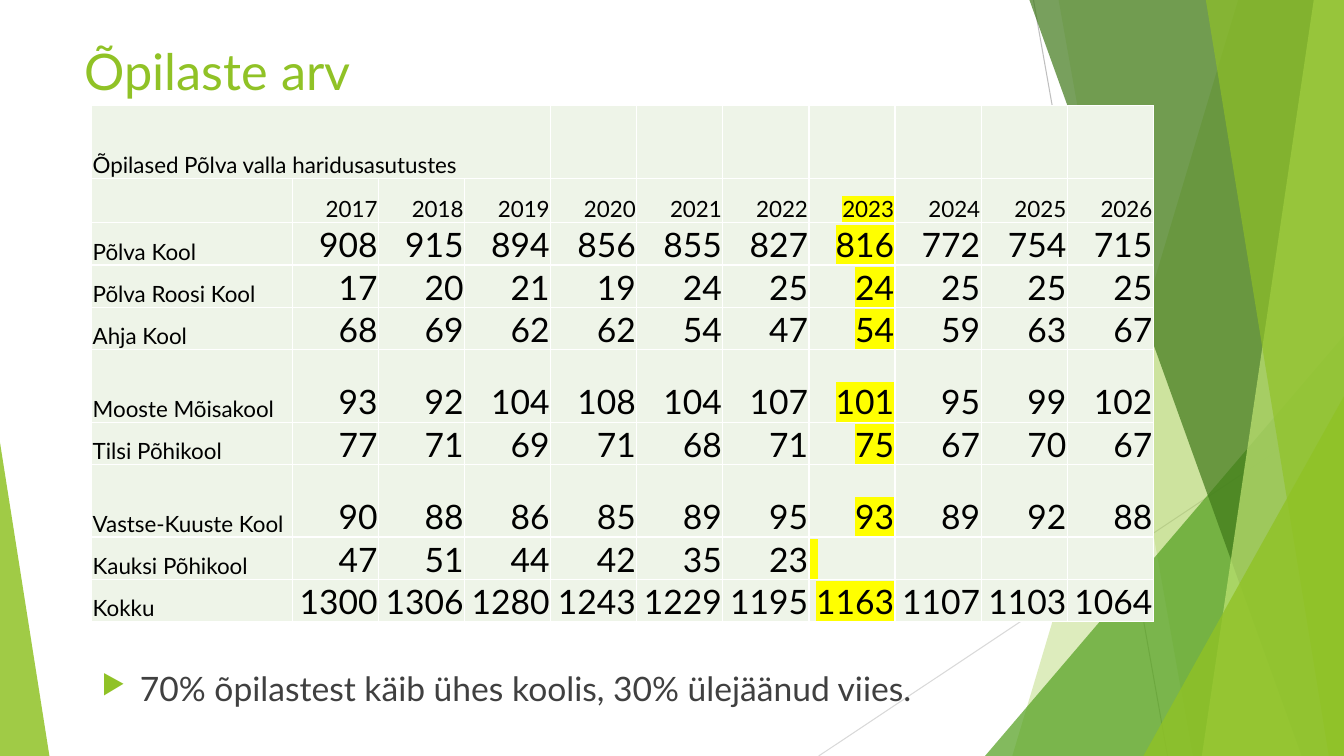
from dataclasses import dataclass
from typing import NamedTuple

from lxml.etree import SubElement
from pptx import Presentation
from pptx.dml.color import RGBColor
from pptx.enum.shapes import MSO_CONNECTOR, MSO_SHAPE
from pptx.enum.text import MSO_ANCHOR, PP_ALIGN
from pptx.oxml.ns import qn
from pptx.util import Inches, Pt


@dataclass(frozen=True)
class Theme:
    font: str = "Lato"
    green: str = "90C226"
    mid_green: str = "54A021"
    dark_green: str = "3F7819"
    pale_green: str = "C0E474"
    cell: str = "EEF4E8"
    border: str = "FFFFFF"
    mark: str = "FFFF00"
    ink: str = "000000"
    body: str = "404040"
    title_size: int = 36
    large: int = 24
    small: int = 16


class Box(NamedTuple):
    left: float
    top: float
    width: float
    height: float

    def emu(self):
        return [Inches(length) for length in self]


THEME = Theme()
YEARS = range(2017, 2027)
MARKED_YEAR = 2023
SCHOOLS = [
    ("Põlva Kool", [908, 915, 894, 856, 855, 827, 816, 772, 754, 715]),
    ("Põlva Roosi Kool", [17, 20, 21, 19, 24, 25, 24, 25, 25, 25]),
    ("Ahja Kool", [68, 69, 62, 62, 54, 47, 54, 59, 63, 67]),
    ("Mooste Mõisakool", [93, 92, 104, 108, 104, 107, 101, 95, 99, 102]),
    ("Tilsi Põhikool", [77, 71, 69, 71, 68, 71, 75, 67, 70, 67]),
    ("Vastse-Kuuste Kool", [90, 88, 86, 85, 89, 95, 93, 89, 92, 88]),
    ("Kauksi Põhikool", [47, 51, 44, 42, 35, 23, " ", "", "", ""]),
    ("Kokku", [1300, 1306, 1280, 1243, 1229, 1195, 1163, 1107, 1103, 1064]),
]
TALL_ROWS = {"Mooste Mõisakool", "Vastse-Kuuste Kool"}


def add_run(paragraph, text, size, color, mark=None):
    run = paragraph.add_run()
    run.text = text
    run.font.size = Pt(size)
    run.font.color.rgb = RGBColor.from_string(color)
    run.font.name = THEME.font
    if mark:
        properties = run.font._element
        highlight = SubElement(properties, qn("a:highlight"))
        SubElement(highlight, qn("a:srgbClr"), val=mark)
        properties.find(qn("a:solidFill")).addnext(highlight)


# Background of green wedges, triangles and thin lines
def paint(shape, color, opacity):
    shape.shadow.inherit = False
    shape.line.fill.background()
    shape.fill.solid()
    shape.fill.fore_color.rgb = RGBColor.from_string(color)
    rgb = shape._element.spPr.find(qn("a:solidFill")).find(qn("a:srgbClr"))
    SubElement(rgb, qn("a:alpha"), val=str(opacity * 1000))


def add_thin_line(slide, box, start, end, color):
    ends = [Inches(box[i % 2] + n) for i, n in enumerate((*start, *end))]
    line = slide.shapes.add_connector(MSO_CONNECTOR.STRAIGHT, *ends)
    line.line.color.rgb = RGBColor.from_string(color)
    line.line.width = Pt(0.75)
    SubElement(line._element.spPr, qn("a:effectLst"))


def add_wedge(slide, box, top_x, bottom_x, color, opacity):
    """Fill from a slanted left side to the right edge of the box."""
    corners = [(top_x, 0), (box.width, 0), (box.width, box.height), (bottom_x, box.height)]
    points = [(Inches(box.left + x), Inches(box.top + y)) for x, y in corners]
    builder = slide.shapes.build_freeform(*points[0])
    builder.add_line_segments(points[1:], close=True)
    paint(builder.convert_to_shape(), color, opacity)


def add_corner(slide, box, width, height, apex, color, opacity):
    """Right triangle in the bottom left (apex 0) or right (apex 1) corner."""
    place = Box(box.left + apex * (box.width - width),
                box.top + box.height - height, width, height)
    corner = slide.shapes.add_shape(MSO_SHAPE.ISOSCELES_TRIANGLE, *place.emu())
    corner.adjustments[0] = apex
    paint(corner, color, opacity)


def add_background(slide, box):
    add_thin_line(slide, box, (10.25, 0), (11.58, box.height), "BFBFBF")
    add_thin_line(slide, box, (box.width, 4.03), (8.12, box.height), "D9D9D9")
    add_wedge(slide, box, 12.28, 10.04, THEME.green, 30)
    add_wedge(slide, box, 10.5, 11.83, THEME.green, 20)
    add_corner(slide, box, 3.56, 4.17, 1, THEME.mid_green, 72)
    add_wedge(slide, box, 10.21, 12.91, THEME.dark_green, 70)
    add_wedge(slide, box, 13.03, 11.92, THEME.pale_green, 70)
    add_wedge(slide, box, 11.96, 13.18, THEME.green, 65)
    add_corner(slide, box, 1.99, 3.57, 1, THEME.green, 80)
    add_corner(slide, box, 0.49, 3.11, 0, THEME.green, 85)


# Title
def add_title(slide, box):
    title = slide.shapes.title
    title.left, title.top, title.width, title.height = box.emu()
    title.text_frame.vertical_anchor = MSO_ANCHOR.TOP
    paragraph = title.text_frame.paragraphs[0]
    paragraph.alignment = PP_ALIGN.LEFT
    add_run(paragraph, "Õpilaste arv", THEME.title_size, THEME.green)
    slide.shapes._spTree.append(title._element)


# Table of pupils by school and year
def style_cell(cell):
    cell.margin_left = cell.margin_right = cell.margin_top = Inches(0.01)
    cell.margin_bottom = 0
    cell.vertical_anchor = MSO_ANCHOR.BOTTOM
    cell.fill.solid()
    cell.fill.fore_color.rgb = RGBColor.from_string(THEME.cell)
    properties = cell._tc.get_or_add_tcPr()
    for position, side in enumerate(("lnL", "lnR", "lnT", "lnB")):
        line = SubElement(properties, qn(f"a:{side}"), w=str(Pt(1)))
        fill = SubElement(line, qn("a:solidFill"))
        SubElement(fill, qn("a:srgbClr"), val=THEME.border)
        properties.insert(position, line)


def add_pupil_table(slide, box):
    rows = [("Õpilased Põlva valla haridusasutustes", [""] * len(YEARS)), ("", YEARS), *SCHOOLS]
    frame = slide.shapes.add_table(len(rows), len(YEARS) + 1, *box.emu())
    table = frame.table
    table.first_row = table.horz_banding = False

    name_width = 1.99
    year_width = (box.width - name_width) / len(YEARS)
    for index, column in enumerate(table.columns):
        column.width = Inches(year_width if index else name_width)

    for index, (name, counts) in enumerate(rows):
        tall = index == 0 or name in TALL_ROWS
        table.rows[index].height = Inches(0.72 if tall else 0.44 if index == 1 else 0.42)
        for cell in table.rows[index].cells:
            style_cell(cell)
        if name:
            add_run(table.cell(index, 0).text_frame.paragraphs[0], name, THEME.small, THEME.ink)
        size = THEME.small if index == 1 else THEME.large
        for column, (year, count) in enumerate(zip(YEARS, counts), start=1):
            if count == "":
                continue
            paragraph = table.cell(index, column).text_frame.paragraphs[0]
            paragraph.alignment = PP_ALIGN.LEFT if count == " " else PP_ALIGN.RIGHT
            mark = THEME.mark if year == MARKED_YEAR else None
            add_run(paragraph, str(count), size, THEME.ink, mark)
    table.cell(0, 0).merge(table.cell(0, 3))


# Bulleted conclusion
def add_conclusion(slide, box):
    conclusion = slide.shapes.add_textbox(*box.emu())
    conclusion.text_frame.word_wrap = True
    paragraph = conclusion.text_frame.paragraphs[0]
    add_run(paragraph, "70% õpilastest käib ühes koolis, 30% ülejäänud viies.",
            THEME.large, THEME.body)
    properties = paragraph._p.get_or_add_pPr()
    indent = Inches(0.38)
    properties.set("marL", str(indent))
    properties.set("indent", str(-indent))
    color = SubElement(properties, qn("a:buClr"))
    SubElement(color, qn("a:srgbClr"), val=THEME.green)
    SubElement(properties, qn("a:buSzPct"), val="80000")
    SubElement(properties, qn("a:buChar"), char="▶")


def main():
    page = Box(0, 0, 13.33, 7.5)
    presentation = Presentation()
    presentation.slide_width, presentation.slide_height = page.emu()[2:]
    slide = presentation.slides.add_slide(presentation.slide_layouts[5])
    add_background(slide, page)
    add_title(slide, Box(0.74, 0.35, 9.4, 1.44))
    add_conclusion(slide, Box(0.91, 6.58, 9.4, 0.57))
    add_pupil_table(slide, Box(0.91, 1.05, 10.53, 5.12))
    presentation.save("out.pptx")


if __name__ == "__main__":
    main()
